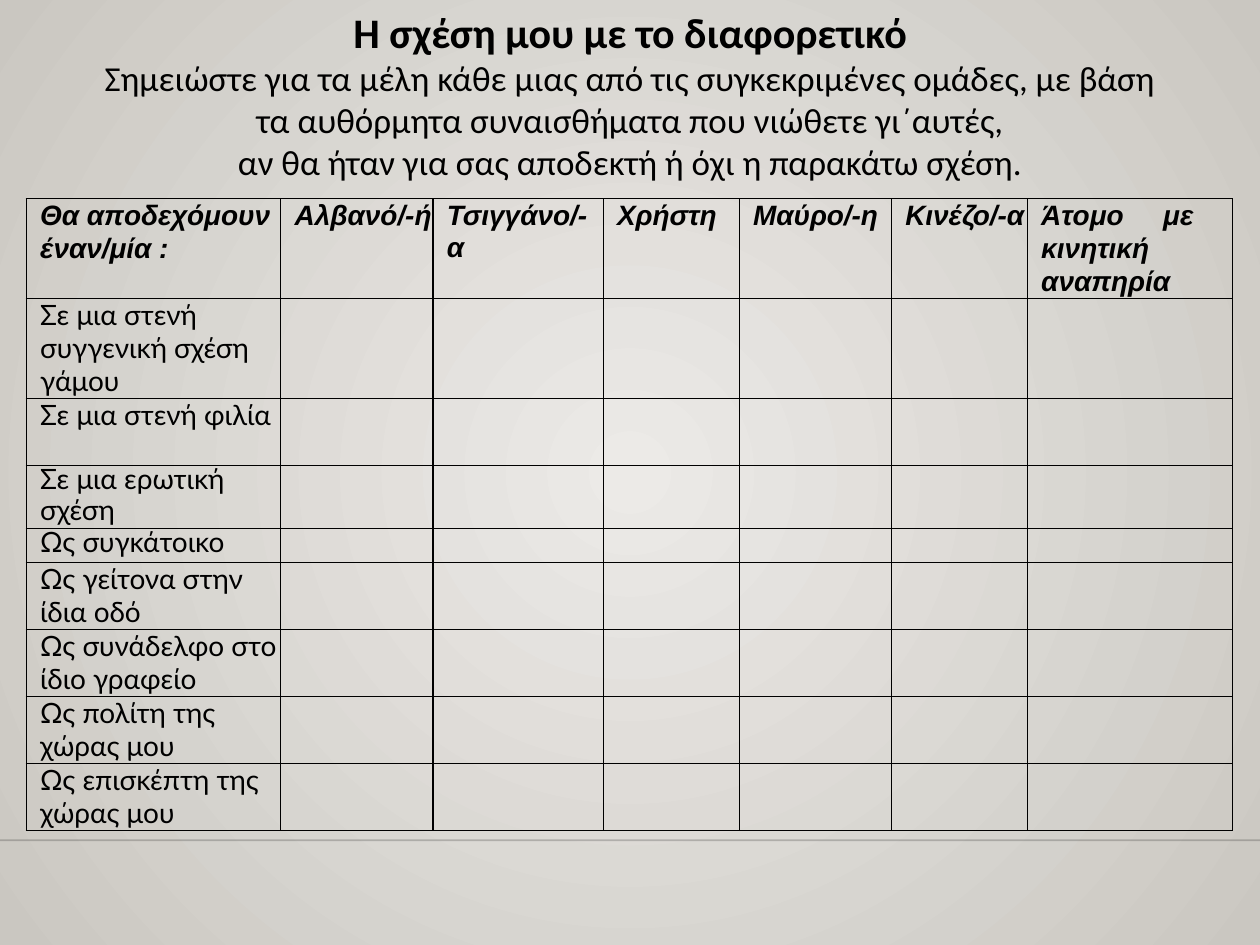
import pptx
import pptx.dml.color
import pptx.enum.shapes
import pptx.enum.text
import pptx.oxml
import pptx.util
from pptx.util import Cm

BLACK = pptx.dml.color.RGBColor(0x00, 0x00, 0x00)
CENTRE = pptx.dml.color.RGBColor(0xEC, 0xEA, 0xE7)
EDGE = pptx.dml.color.RGBColor(0xCA, 0xC7, 0xC1)
NS = 'xmlns:a="http://schemas.openxmlformats.org/drawingml/2006/main"'
PP_ALIGN = pptx.enum.text.PP_ALIGN

TITLE = [
    "Η σχέση μου με το διαφορετικό",
    "Σημειώστε για τα μέλη κάθε μιας από τις συγκεκριμένες ομάδες, με βάση",
    "τα αυθόρμητα συναισθήματα που νιώθετε γι΄αυτές,",
    "αν θα ήταν για σας αποδεκτή ή όχι η παρακάτω σχέση.",
]
HEADERS = ["Θα αποδεχόμουν έναν/μία :", "Αλβανό/-ή", "Τσιγγάνο/-α", "Χρήστη",
           "Mαύρο/-η", "Κινέζο/-α", "Άτομο με κινητική αναπηρία"]
COL_WIDTHS = [5.13, 3.07, 3.43, 2.74, 3.07, 2.74, 4.14]
# Label, row height in cm, line spacing in points
RELATIONS = [
    ("Σε μια στενή συγγενική σχέση γάμου", 2.01, 18.8),
    ("Σε μια στενή φιλία", 1.35, 18.8),
    ("Σε μια ερωτική σχέση", 1.27, 17.5),
    ("Ως συγκάτοικο", 0.69, 17.5),
    ("Ως γείτονα στην ίδια οδό", 1.35, 18.8),
    ("Ως συνάδελφο στο ίδιο γραφείο", 1.35, 18.8),
    ("Ως πολίτη της χώρας μου", 1.35, 18.8),
    ("Ως επισκέπτη της χώρας μου", 1.35, 18.8),
]


def set_font(p, name, size, bold, italic=False):
    for r in p.runs:
        r.font.name = name
        r.font.size = pptx.util.Pt(size)
        r.font.bold = bold
        r.font.italic = italic
        r.font.color.rgb = BLACK


def add_borders(cell):
    tcPr = cell._tc.get_or_add_tcPr()
    for side in ("lnL", "lnR", "lnT", "lnB"):
        tcPr.append(pptx.oxml.parse_xml(
            f'<a:{side} {NS} w="9525"><a:solidFill><a:srgbClr val="{BLACK}"/>'
            f'</a:solidFill><a:prstDash val="solid"/></a:{side}>'))


prs = pptx.Presentation()
prs.slide_width, prs.slide_height = Cm(25.4), Cm(19.05)
s = prs.slides.add_slide(prs.slide_layouts[5])

# Radial background
fill = s.background.fill
fill.gradient()
for stop, colour in zip(fill.gradient_stops, (CENTRE, EDGE)):
    stop.color.rgb = colour
lin = s._element.find(".//{*}bgPr/{*}gradFill/{*}lin")
lin.getparent().replace(lin, pptx.oxml.parse_xml(
    f'<a:path {NS} path="circle">'
    '<a:fillToRect l="50000" t="50000" r="50000" b="50000"/></a:path>'))

# Faint rule near the foot
rule = s.shapes.add_connector(pptx.enum.shapes.MSO_CONNECTOR.STRAIGHT,
                              0, Cm(16.94), prs.slide_width, Cm(16.94))
rule.line.width = pptx.util.Pt(1)
rule.line.color.rgb = BLACK
rule._element.find(".//{*}ln//{*}srgbClr").append(
    pptx.oxml.parse_xml(f'<a:alpha {NS} val="20000"/>'))
rule._element.spPr.append(pptx.oxml.parse_xml(f'<a:effectLst {NS}/>'))

# Title with instructions
title = s.shapes.title
title.left, title.top, title.width, title.height = Cm(2.06), Cm(0.1), Cm(21.29), Cm(3.63)
tf = title.text_frame
tf.text = "\n".join(TITLE)
tf.word_wrap = True
tf.auto_size = pptx.enum.text.MSO_AUTO_SIZE.NONE
tf.vertical_anchor = pptx.enum.text.MSO_ANCHOR.TOP
tf.margin_left = tf.margin_right = tf.margin_bottom = 0
tf.margin_top = Cm(0.03)
for i, p in enumerate(tf.paragraphs):
    p.alignment = PP_ALIGN.CENTER
    set_font(p, "Calibri", 20 if i else 24, bold=i == 0)

# Table of relations by group
rows = [(HEADERS, 2.01, 18.4)]
rows += [([label] + [""] * (len(HEADERS) - 1), height, spacing)
         for label, height, spacing in RELATIONS]
table = s.shapes.add_table(len(rows), len(HEADERS), Cm(0.53), Cm(4.01),
                           Cm(sum(COL_WIDTHS)), Cm(sum(row[1] for row in rows))).table
table.first_row = table.horz_banding = False
for column, width in zip(table.columns, COL_WIDTHS):
    column.width = Cm(width)
for i, (texts, height, spacing) in enumerate(rows):
    table.rows[i].height = Cm(height)
    for j, text in enumerate(texts):
        cell = table.cell(i, j)
        add_borders(cell)
        cell.fill.background()
        cell.margin_left = Cm(0.28)
        cell.margin_right = cell.margin_top = cell.margin_bottom = 0
        cell.text = text
        p = cell.text_frame.paragraphs[0]
        long_header = i == 0 and j in (0, len(HEADERS) - 1)
        p.line_spacing = pptx.util.Pt(18.8 if long_header else spacing)
        if i == 0:
            set_font(p, "Arial", 16, bold=True, italic=True)
        else:
            set_font(p, "Lato", 16, bold=False)
        if not text:
            # Small empty lines keep the short row at its height
            p._p.append(pptx.oxml.parse_xml(f'<a:endParaRPr {NS} sz="1200"/>'))

# Justified header, kept clear of the right border
last_header = table.cell(0, len(HEADERS) - 1)
last_header.margin_right = Cm(0.79)
last_header.text_frame.paragraphs[0].alignment = PP_ALIGN.JUSTIFY

prs.save("out.pptx")
